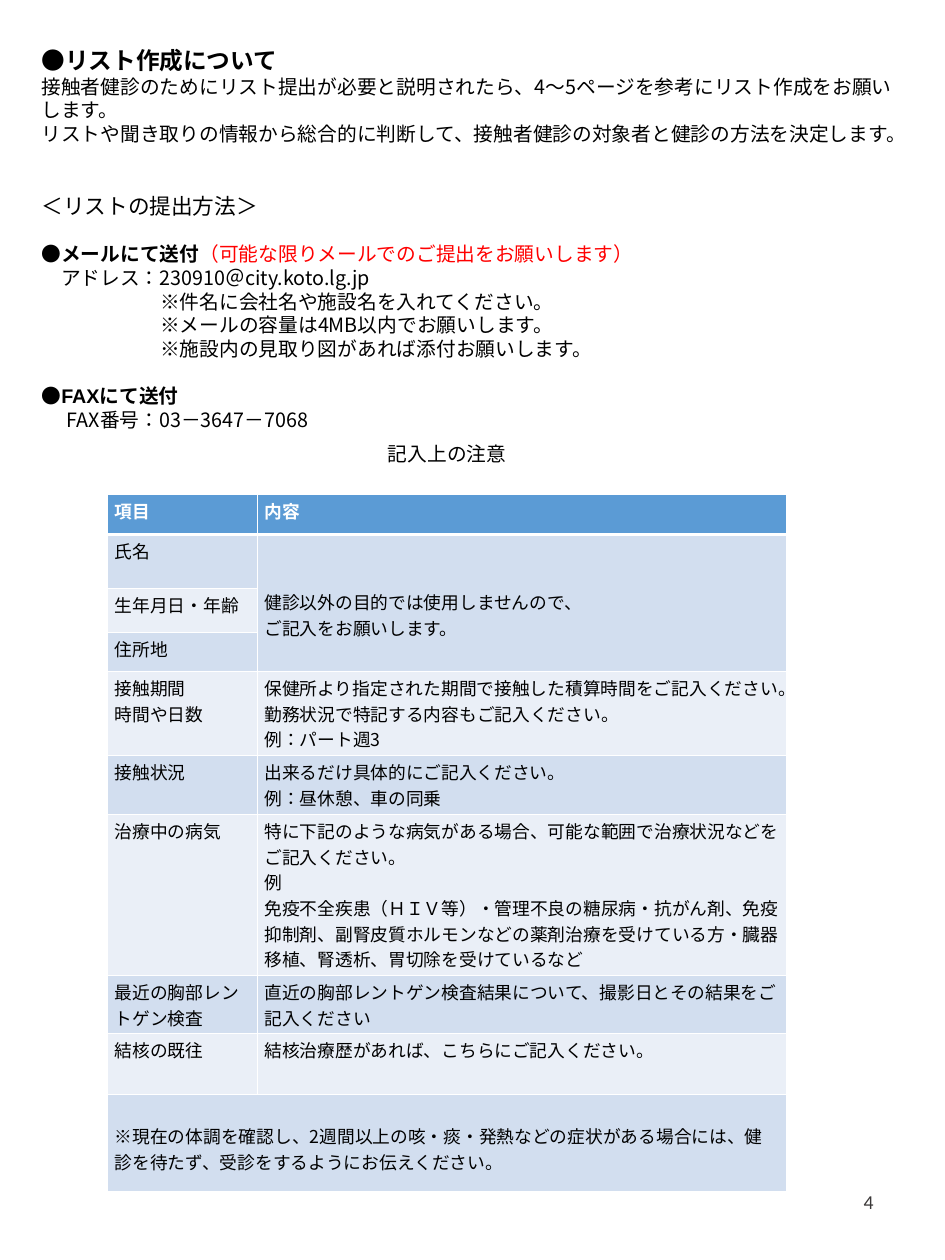
"""Build the page on preparing and submitting the contact list."""
import dataclasses

import lxml.etree
import pptx
import pptx.dml.color
import pptx.enum.lang
import pptx.enum.text
import pptx.oxml.ns
import pptx.util

Cm = pptx.util.Cm
Pt = pptx.util.Pt
ANCHOR = pptx.enum.text.MSO_ANCHOR
ALIGN = pptx.enum.text.PP_ALIGN
qn = pptx.oxml.ns.qn


@dataclasses.dataclass(frozen=True)
class Theme:
    japanese: str = "Noto Sans CJK JP"
    latin: str = "Arial"
    number: str = "Calibri"
    black: str = "000000"
    white: str = "FFFFFF"
    red: str = "FF0000"
    gray: str = "3B3838"
    header: str = "5B9BD5"
    bands: tuple = ("EAEFF7", "D2DEEF")
    heading: int = 24
    subheading: int = 22
    body: int = 20
    cell: int = 18


theme = Theme()


def add_text(paragraph, text, size=theme.body, color=theme.black,
             font=theme.japanese, bold=False):
    run = paragraph.add_run()
    run.text = text
    run.font.size = Pt(size)
    run.font.bold = bold
    run.font.name = font
    run.font.language_id = pptx.enum.lang.MSO_LANGUAGE_ID.JAPANESE
    run.font.color.rgb = pptx.dml.color.RGBColor.from_string(color)
    east_asian = run.font._element.makeelement(
        qn("a:ea"), {"typeface": theme.japanese})
    run.font._element.find(qn("a:latin")).addnext(east_asian)


def add_box(left, top, width, height):
    box = slide.shapes.add_textbox(Cm(left), Cm(top), Cm(width), Cm(height))
    box.text_frame.word_wrap = True
    box.text_frame.vertical_anchor = ANCHOR.MIDDLE
    return box.text_frame


presentation = pptx.Presentation()
presentation.slide_width = Cm(33.86)
presentation.slide_height = Cm(45.16)
slide = presentation.slides.add_slide(presentation.slide_layouts[6])

strong = {"font": theme.latin, "bold": True}
guide_lines = [
    (theme.heading, 0, 0, [("●", {}), ("リスト作成について", strong)]),
    (theme.body, 0, 0, [("接触者健診のためにリスト提出が必要と説明されたら、4～5ページを参考にリスト作成をお願いします。", {})]),
    (theme.body, 0, 0, [("リストや聞き取りの情報から総合的に判断して、接触者健診の対象者と健診の方法を決定します。", {})]),
    (theme.subheading, 48, 0, [("＜リストの提出方法＞", {})]),
    (theme.body, 24, 0, [("●メールにて送付", strong),
                         ("（可能な限りメールでのご提出をお願いします）", {"color": theme.red})]),
    (theme.body, 0, 0.7, [("アドレス：230910＠city.koto.lg.jp", {})]),
    (theme.body, 0, 4.25, [("※件名に会社名や施設名を入れてください。", {})]),
    (theme.body, 0, 4.25, [("※メールの容量は4MB以内でお願いします。", {})]),
    (theme.body, 0, 4.25, [("※施設内の見取り図があれば添付お願いします。", {})]),
    (theme.body, 24, 0, [("●", {"bold": True}), ("FAXにて送付", strong)]),
    (theme.body, 0, 0.9, [("FAX番号：03－3647－7068", {})]),
]
guide = add_box(1.24, 1.42, 31.37, 14.27)
guide.margin_top = guide.margin_bottom = 0
for index, (size, gap, indent, runs) in enumerate(guide_lines):
    paragraph = guide.add_paragraph() if index else guide.paragraphs[0]
    paragraph.line_spacing = Pt(size * 1.2)
    paragraph.space_before = Pt(gap)
    paragraph._p.get_or_add_pPr().set("marL", str(Cm(indent)))
    for text, style in runs:
        add_text(paragraph, text, size=size, **style)

caption = add_box(9.86, 14.88, 12.32, 2.9).paragraphs[0]
caption.alignment = ALIGN.CENTER
caption.line_spacing = 0.9
add_text(caption, "記入上の注意")

entries = [
    (1.42, ["項目"], ["内容"]),
    (1.93, ["氏名"], ["健診以外の目的では使用しませんので、", "ご記入をお願いします。"]),
    (1.57, ["生年月日・年齢"], []),
    (1.42, ["住所地"], []),
    (3.01, ["接触期間", "時間や日数"],
     ["保健所より指定された期間で接触した積算時間をご記入ください。勤務状況で特記する内容もご記入ください。",
      "例：パート週3"]),
    (2.11, ["接触状況"], ["出来るだけ具体的にご記入ください。", "例：昼休憩、車の同乗"]),
    (5.77, ["治療中の病気"],
     ["特に下記のような病気がある場合、可能な範囲で治療状況などをご記入ください。", "例",
      "免疫不全疾患（ＨＩＶ等）・管理不良の糖尿病・抗がん剤、免疫抑制剤、副腎皮質ホルモンなどの"
      "薬剤治療を受けている方・臓器移植、腎透析、胃切除を受けているなど"]),
    (2.09, ["最近の胸部レントゲン検査"],
     ["直近の胸部レントゲン検査結果について、撮影日とその結果をご記入ください"]),
    (2.16, ["結核の既往"], ["結核治療歴があれば、こちらにご記入ください。"]),
    (3.48, ["※現在の体調を確認し、2週間以上の咳・痰・発熱などの症状がある場合には、"
            "健診を待たず、受診をするようにお伝えください。"], []),
]
table_height = sum(entry[0] for entry in entries)
table = slide.shapes.add_table(
    len(entries), 2, Cm(3.86), Cm(17.73), Cm(24.31), Cm(table_height)).table
table.columns[0].width = Cm(5.36)
table.columns[1].width = Cm(18.95)
table.cell(1, 1).merge(table.cell(3, 1))
table.cell(9, 0).merge(table.cell(9, 1))
table.cell(1, 1).margin_top = Cm(1.96)
table.cell(9, 0).margin_top = Cm(1.05)

for row, (height, *contents) in enumerate(entries):
    table.rows[row].height = Cm(height)
    fill = theme.bands[row % 2] if row else theme.header
    for column, lines in enumerate(contents):
        cell = table.cell(row, column)
        cell.fill.solid()
        cell.fill.fore_color.rgb = pptx.dml.color.RGBColor.from_string(fill)
        for index, line in enumerate(lines):
            paragraph = (cell.text_frame.add_paragraph() if index
                         else cell.text_frame.paragraphs[0])
            add_text(paragraph, line, size=theme.cell, bold=row == 0,
                     color=theme.black if row else theme.white)

for cell in table.rows[0].cells:
    properties = cell._tc.get_or_add_tcPr()
    border = properties.makeelement(qn("a:lnB"), {"w": str(Pt(3))})
    border_fill = lxml.etree.SubElement(border, qn("a:solidFill"))
    lxml.etree.SubElement(border_fill, qn("a:srgbClr"), val=theme.white)
    properties.insert(0, border)

page_number = add_box(23.93, 41.86, 7.62, 2.41).paragraphs[0]
page_number.alignment = ALIGN.RIGHT
add_text(page_number, "4", color=theme.gray, font=theme.number)

presentation.save("out.pptx")
